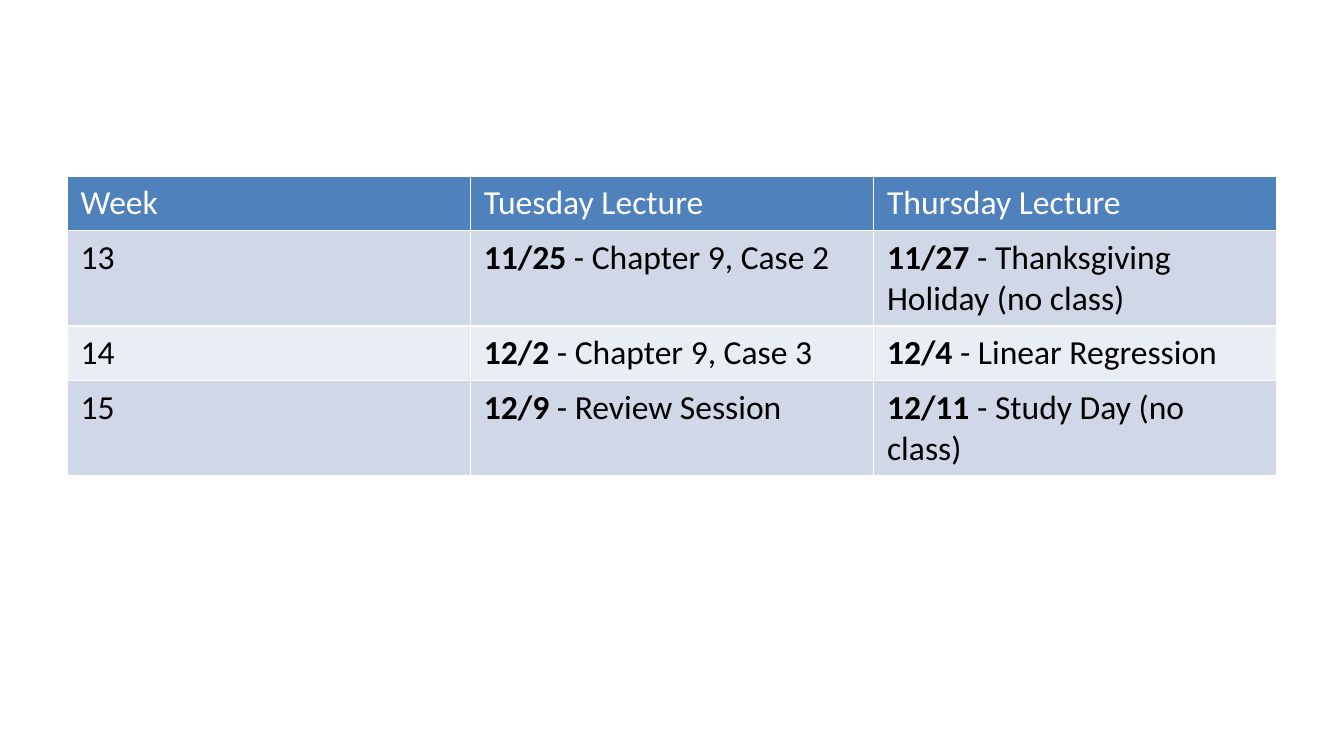
from typing import NamedTuple

from pptx import Presentation
from pptx.dml.color import RGBColor
from pptx.table import _Cell
from pptx.util import Inches, Pt

WHITE = RGBColor(0xFF, 0xFF, 0xFF)
BLACK = RGBColor(0x00, 0x00, 0x00)
HEADER_BLUE = RGBColor(0x4F, 0x81, 0xBD)
BANDS = (RGBColor(0xD0, 0xD8, 0xE8), RGBColor(0xE9, 0xED, 0xF4))

PAGE_WIDTH = 10
HEADINGS = ("Week", "Tuesday Lecture", "Thursday Lecture")
COLUMN_WIDTH = 3
LINE_HEIGHT = 0.4
TWO_LINE_HEIGHT = 0.71


class Lecture(NamedTuple):
    date: str
    topic: str


class Week(NamedTuple):
    number: str
    tuesday: Lecture
    thursday: Lecture
    height: float


WEEKS = (
    Week("13", Lecture("11/25", "Chapter 9, Case 2"),
         Lecture("11/27", "Thanksgiving Holiday (no class)"), TWO_LINE_HEIGHT),
    Week("14", Lecture("12/2", "Chapter 9, Case 3"),
         Lecture("12/4", "Linear Regression"), LINE_HEIGHT),
    Week("15", Lecture("12/9", "Review Session"),
         Lecture("12/11", "Study Day (no class)"), TWO_LINE_HEIGHT),
)


def add_span(cell: _Cell, text: str, color: RGBColor, bold: bool = False) -> None:
    span = cell.text_frame.paragraphs[0].add_run()
    span.text = text
    span.font.name = "Calibri"
    span.font.size = Pt(18)
    span.font.bold = bold
    span.font.color.rgb = color


def fill_cell(cell: _Cell, color: RGBColor) -> None:
    cell.fill.solid()
    cell.fill.fore_color.rgb = color


def add_lecture(cell: _Cell, lecture: Lecture) -> None:
    add_span(cell, lecture.date, BLACK, bold=True)
    add_span(cell, f" - {lecture.topic}", BLACK)


def main() -> None:
    # Widescreen page, 16:9
    deck = Presentation()
    deck.slide_width = Inches(PAGE_WIDTH)
    deck.slide_height = Inches(PAGE_WIDTH * 9 / 16)
    page = deck.slides.add_slide(deck.slide_layouts[6])

    # Schedule table; the default table style supplies the white borders
    heights = [LINE_HEIGHT] + [week.height for week in WEEKS]
    schedule = page.shapes.add_table(
        len(heights), len(HEADINGS), Inches(0.5), Inches(1.31),
        Inches(COLUMN_WIDTH * len(HEADINGS)), Inches(sum(heights))).table
    for row, height in zip(schedule.rows, heights):
        row.height = Inches(height)

    # Header row
    for cell, heading in zip(schedule.rows[0].cells, HEADINGS):
        fill_cell(cell, HEADER_BLUE)
        add_span(cell, heading, WHITE)

    # One banded row per week
    for index, week in enumerate(WEEKS):
        cells = list(schedule.rows[index + 1].cells)
        for cell in cells:
            fill_cell(cell, BANDS[index % 2])
        add_span(cells[0], week.number, BLACK)
        add_lecture(cells[1], week.tuesday)
        add_lecture(cells[2], week.thursday)

    deck.save("out.pptx")


if __name__ == "__main__":
    main()
